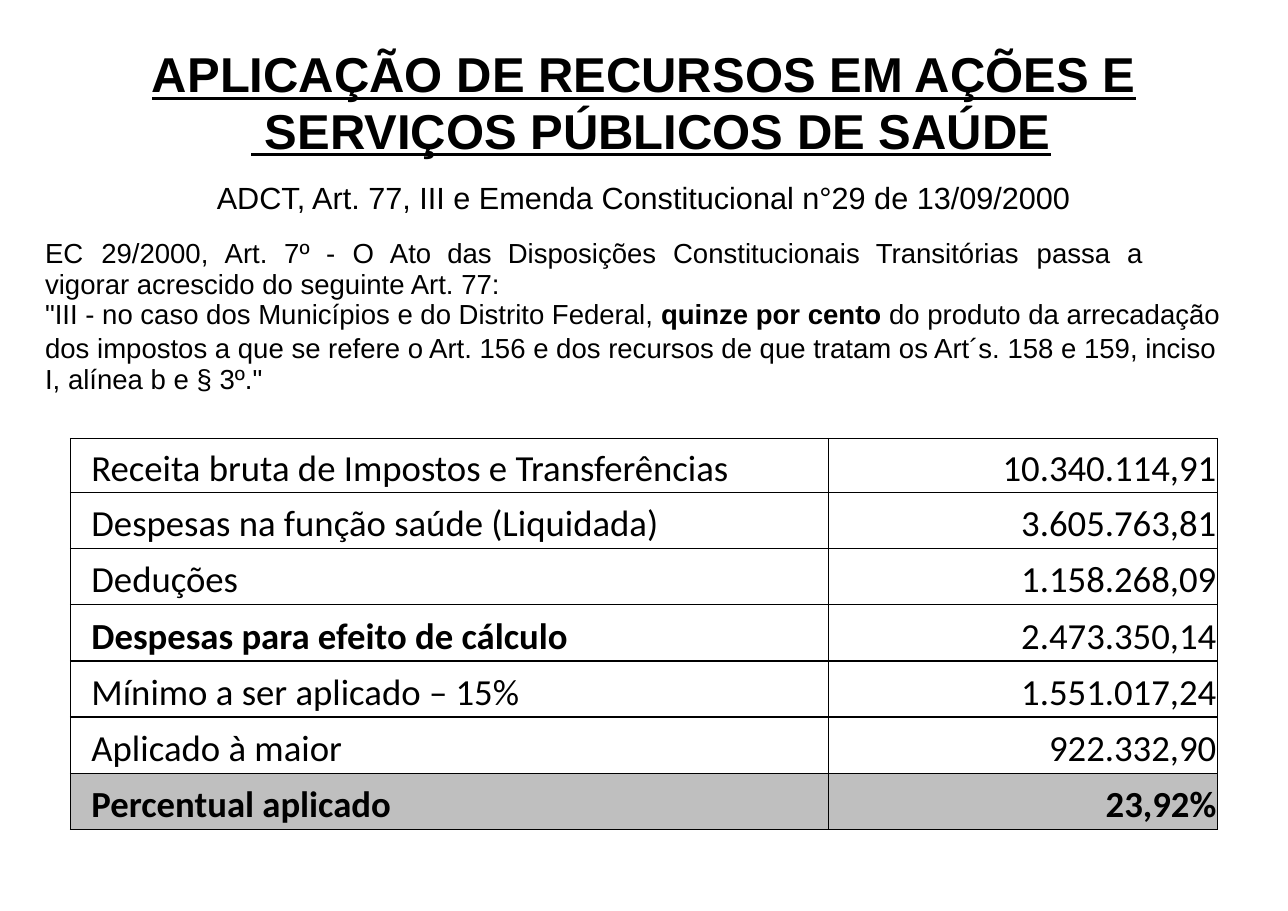
from lxml.etree import SubElement
from pptx import Presentation
from pptx.dml.color import RGBColor
from pptx.enum.text import MSO_ANCHOR, PP_ALIGN
from pptx.oxml import parse_xml
from pptx.oxml.ns import nsdecls, qn
from pptx.util import Inches, Pt

COLORS = {"ink": "000000", "plain": "FFFFFF", "total": "BFBFBF"}


def style(par, size, font="Arial", bold=False):
    """Format every run of a paragraph."""
    for run in par.runs:
        run.font.name = font
        run.font.size = Pt(size)
        run.font.bold = bold
        run.font.color.rgb = RGBColor.from_string(COLORS["ink"])


def add_box(left, top, width, height):
    """Add a wrapping text box without margins and return its frame."""
    box = slide.shapes.add_textbox(
        Inches(left), Inches(top), Inches(width), Inches(height))
    frame = box.text_frame
    frame.word_wrap = True
    frame.margin_left = frame.margin_right = 0
    frame.margin_top = frame.margin_bottom = 0
    return frame


deck = Presentation()
deck.slide_width, deck.slide_height = Inches(11.69), Inches(8.27)
slide = deck.slides.add_slide(deck.slide_layouts[6])

# Title: the second line hangs to the right of the first
title = add_box(1.36, 0.42, 9.2, 1.04).paragraphs[0]
title.text = "APLICAÇÃO DE RECURSOS EM AÇÕES E\v SERVIÇOS PÚBLICOS DE SAÚDE"
title.line_spacing = Pt(36.9)
title.space_before = Pt(3.5)
style(title, 32, bold=True)
for run in title.runs:
    run.font.underline = True
props = title._p.get_or_add_pPr()
props.set("marL", str(Inches(0.92)))
props.set("indent", str(Inches(-0.9)))

# Legal basis
basis = add_box(0.4, 1.62, 10.89, 0.35).paragraphs[0]
basis.text = "ADCT, Art. 77, III e Emenda Constitucional n°29 de 13/09/2000"
basis.alignment = PP_ALIGN.CENTER
style(basis, 20)

# Quoted law: text, line spacing, space before
law = [
    ("EC\t29/2000,\tArt.\t7º\t-\tO\tAto\tdas\tDisposições\tConstitucionais"
     "\tTransitórias\tpassa\ta\vvigorar acrescido do seguinte Art. 77:", 20.8, 0),
    ("\"III - no caso dos Municípios e do Distrito Federal, "
     "|quinze por cento| do produto da arrecadação", 19.6, 0),
    ("dos impostos a que se refere o Art. 156 e dos recursos de que tratam os "
     "Art´s. 158 e 159, inciso\vI, alínea b e § 3º.\"", 20.6, 1.1),
]
frame = add_box(0.41, 2.15, 11.1, 1.45)
for i, (text, line, before) in enumerate(law):
    par = frame.add_paragraph() if i else frame.paragraphs[0]
    par.line_spacing, par.space_before = Pt(line), Pt(before)
    parts = text.split("|")
    par.text = parts[0]
    for part in parts[1:]:
        par.add_run().text = part
    style(par, 18)
    for run in par.runs[1::2] if len(parts) > 1 else []:
        run.font.bold = True

stops = [0.51, 1.63, 2.17, 2.55, 2.79, 3.13, 3.65, 4.2, 5.7, 7.54, 9, 9.82]
tabs = SubElement(frame.paragraphs[0]._p.get_or_add_pPr(), qn("a:tabLst"))
for stop in stops:
    SubElement(tabs, qn("a:tab"), pos=str(Inches(stop)), algn="l")

# Table: label, value, bold label, bold value
rows = [
    ("Receita bruta de Impostos e Transferências", "10.340.114,91", False, False),
    ("Despesas na função saúde (Liquidada)", "3.605.763,81", False, False),
    ("Deduções", "1.158.268,09", False, False),
    ("Despesas para efeito de cálculo", "2.473.350,14", True, False),
    ("Mínimo a ser aplicado – 15%", "1.551.017,24", False, False),
    ("Aplicado à maior", "922.332,90", False, False),
    ("Percentual aplicado", "23,92%", True, True),
]
table = slide.shapes.add_table(
    len(rows), 2, Inches(0.64), Inches(3.98), Inches(10.41), Inches(3.55)).table
table.first_row = table.horz_banding = False
table.columns[0].width, table.columns[1].width = Inches(6.88), Inches(3.53)
for r, row in enumerate(rows):
    table.rows[r].height = Inches(0.51 if r else 0.49)
    for c in range(2):
        cell = table.cell(r, c)
        cell.text = row[c]
        cell.vertical_anchor = MSO_ANCHOR.MIDDLE
        cell.margin_left = Inches(0.01 if c else 0.19)
        cell.margin_right = Inches(0.01)
        cell.margin_top = Inches(0.01 if r else 0)
        cell.margin_bottom = 0
        par = cell.text_frame.paragraphs[0]
        par.alignment = PP_ALIGN.RIGHT if c else PP_ALIGN.LEFT
        par.line_spacing = 1.15
        style(par, 24, "Calibri", row[c + 2])
        cell.fill.solid()
        shade = COLORS["total" if r == len(rows) - 1 else "plain"]
        cell.fill.fore_color.rgb = RGBColor.from_string(shade)
        for i, side in enumerate("LRTB"):
            cell._tc.get_or_add_tcPr().insert(i, parse_xml(
                f'<a:ln{side} {nsdecls("a")} w="{Pt(1)}"><a:solidFill>'
                f'<a:srgbClr val="{COLORS["ink"]}"/></a:solidFill></a:ln{side}>'))

deck.save("out.pptx")
